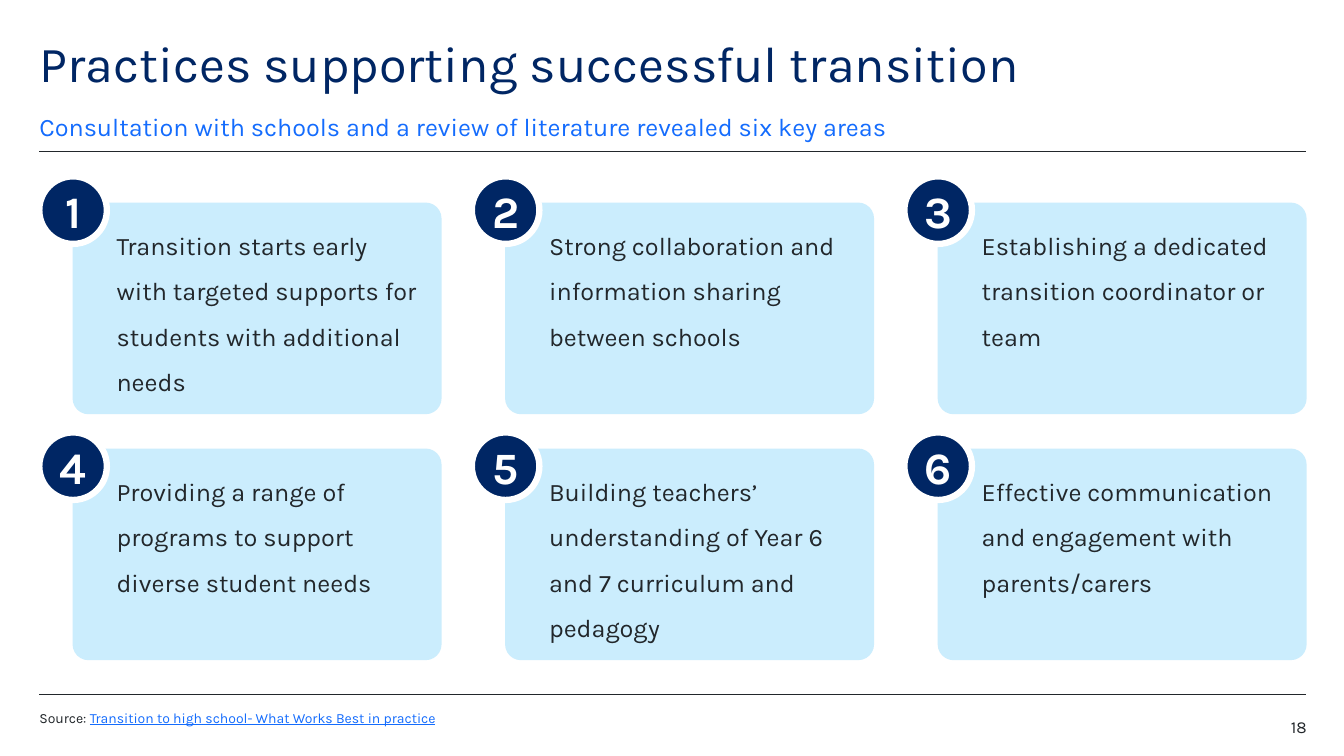
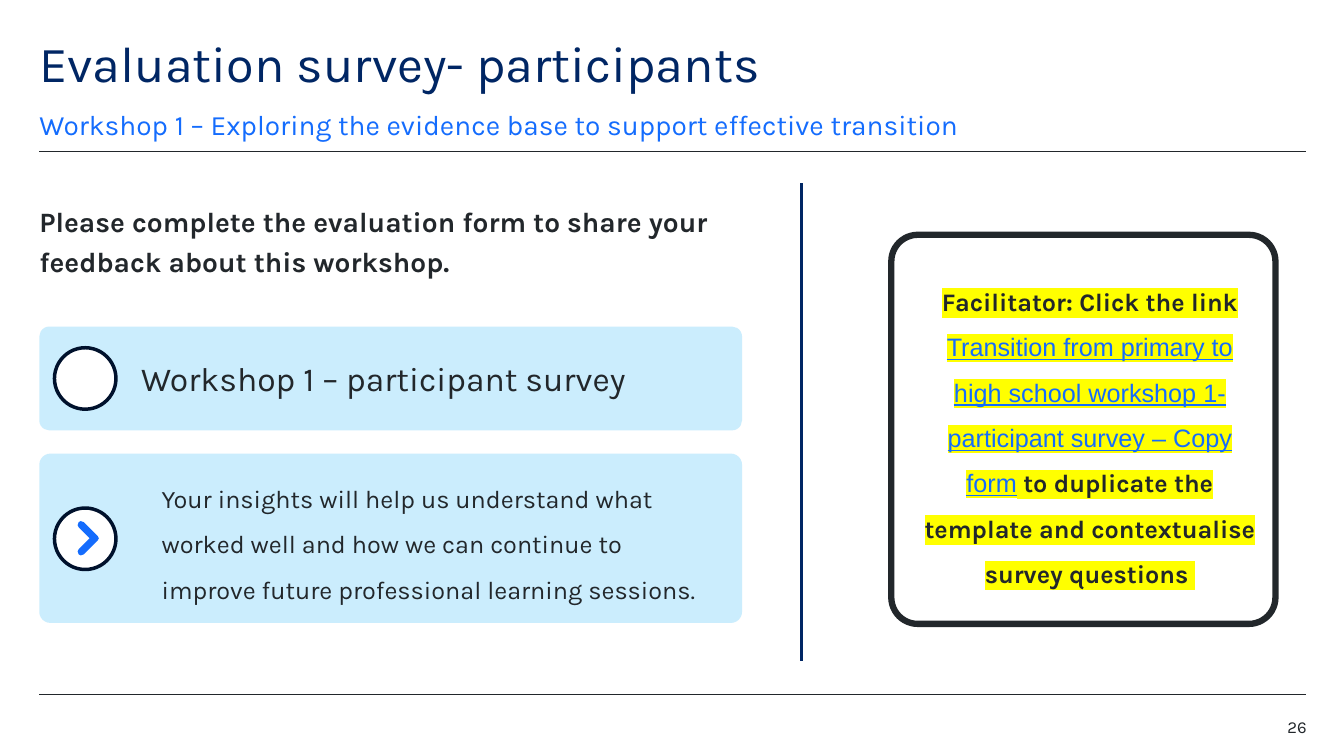
from lxml.etree import SubElement
from pptx import Presentation
from pptx.dml.color import RGBColor
from pptx.enum.shapes import MSO_CONNECTOR, MSO_SHAPE
from pptx.enum.text import MSO_ANCHOR, MSO_AUTO_SIZE, PP_ALIGN
from pptx.oxml import parse_xml
from pptx.oxml.ns import nsdecls, qn
from pptx.util import Inches, Pt

NAVY, BLUE, INK = "002664", "146CFD", "22272B"
PALE, WHITE, DARK, YELLOW = "CBEDFD", "FFFFFF", "00112C", "FFFF00"
LEFT, RIGHT = 0.39, 12.95
PRACTICES = [
    "Transition starts early\nwith targeted supports for students with additional needs",
    "Strong collaboration and information sharing between schools",
    "Establishing a dedicated transition coordinator or team",
    "Providing a range of programs to support diverse student needs",
    "Building teachers’ understanding of Year 6 and 7 curriculum and pedagogy",
    "Effective communication and engagement with parents/carers",
]


def rgb(code):
    """Turn a hex string into a colour."""
    return RGBColor.from_string(code)


def inches(*values):
    """Turn numbers into lengths."""
    return [Inches(v) for v in values]


def set_all(target, values):
    """Set each named attribute on the target."""
    for name, value in values.items():
        setattr(target, name, value)


def add_run(p, text, size, color=INK, font="Karla", highlight=None, **style):
    """Add a formatted run to a paragraph."""
    r = p.add_run()
    r.text = text
    set_all(r.font, {"name": font, "size": Pt(size), **style})
    r.font.color.rgb = rgb(color)
    if highlight:
        mark = parse_xml(f'<a:highlight {nsdecls("a")}><a:srgbClr val="{highlight}"/></a:highlight>')
        r.font._element.find(qn("a:solidFill")).addnext(mark)


def write(sp, runs, size, insets=(0, 0, 0, 0), anchor=MSO_ANCHOR.TOP,
          align=PP_ALIGN.LEFT, spacing=1.0, after=0, fit=MSO_AUTO_SIZE.NONE):
    """Fill a shape with one paragraph of (text, style) runs, breaking lines at newlines."""
    tf = sp.text_frame
    sides = ("margin_left", "margin_top", "margin_right", "margin_bottom")
    set_all(tf, {"word_wrap": True, "auto_size": fit, "vertical_anchor": anchor,
                 **dict(zip(sides, inches(*insets)))})
    p = tf.paragraphs[0]
    set_all(p, {"alignment": align, "line_spacing": spacing, "space_before": Pt(0),
                "space_after": Pt(after)})
    for text, style in runs:
        for i, line in enumerate(text.split("\n")):
            if i:
                p.add_line_break()
            add_run(p, line, size, **style)


def paint(sp, fill=None, line=None, width=0):
    """Set the fill and outline of a shape and drop its shadow."""
    sp.shadow.inherit = False
    if fill:
        sp.fill.solid()
        sp.fill.fore_color.rgb = rgb(fill)
    else:
        sp.fill.background()
    if line:
        sp.line.color.rgb = rgb(line)
        sp.line.width = Pt(width)
    else:
        sp.line.fill.background()


def add_box(shapes, box, radius, fill=None, line=None, width=0):
    """Add a rounded rectangle."""
    sp = shapes.add_shape(MSO_SHAPE.ROUNDED_RECTANGLE, *inches(*box))
    sp.adjustments[0] = radius
    paint(sp, fill, line, width)
    return sp


def add_circle(shapes, x, y, size, fill, line, width):
    """Add an outlined circle."""
    sp = shapes.add_shape(MSO_SHAPE.OVAL, *inches(x, y, size, size))
    paint(sp, fill, line, width)
    return sp


def add_rule(s, start, end, color=INK, width=0.5):
    """Add a straight line."""
    line = s.shapes.add_connector(MSO_CONNECTOR.STRAIGHT, *inches(*start, *end))
    line.line.color.rgb = rgb(color)
    line.line.width = Pt(width)
    SubElement(line._element.spPr, qn("a:effectLst"))


def add_text(s, box, runs, size, **layout):
    """Add a text box."""
    sp = s.shapes.add_textbox(*inches(*box))
    write(sp, runs, size, **layout)


def fill_placeholder(sp, box, text, size, color, **layout):
    """Move a placeholder and write its unbulleted text."""
    set_all(sp, dict(zip(("left", "top", "width", "height"), inches(*box))))
    pPr = sp.text_frame.paragraphs[0]._p.get_or_add_pPr()
    pPr.set("marL", "0")
    pPr.set("indent", "0")
    SubElement(pPr, qn("a:buNone"))
    write(sp, [(text, {"color": color})], size, **layout)


def add_slide(prs, title, subtitle, number, subtitle_size, subtitle_spacing):
    """Add a slide with its title, subtitle, rules and page number."""
    s = prs.slides.add_slide(prs.slide_layouts[1])
    for y in (1.5, 6.89):
        add_rule(s, (LEFT, y), (RIGHT, y))
    fill_placeholder(s.shapes.title, (LEFT, 0.39, 11.02, 0.6), title, 36, NAVY, spacing=0.9)
    fill_placeholder(s.placeholders[1], (LEFT, 1.06, 11.02, 0.34), subtitle, subtitle_size, BLUE,
                     anchor=MSO_ANCHOR.BOTTOM, spacing=subtitle_spacing, after=12)
    add_text(s, (12.17, 7.13, 0.79, 0.2), [(number, {})], 12,
             align=PP_ALIGN.RIGHT, spacing=0.9, after=6)
    return s


def add_practice(s, number, text, x, card_y, badge_y):
    """Add a card with a numbered badge on its corner."""
    shapes = s.shapes.add_group_shape().shapes
    card = add_box(shapes, (x + 0.33, card_y, 3.66, 2.1), 0.075, PALE)
    write(card, [(text, {})], 18, insets=(0.39, 0.08, 0.2, 0.12), spacing=1.5)
    badge = add_circle(shapes, x, badge_y, 0.67, NAVY, WHITE, 4.5)
    write(badge, [(str(number), {"color": WHITE, "bold": True})], 32,
          insets=(0.1, 0.05, 0.1, 0.05), anchor=MSO_ANCHOR.MIDDLE, align=PP_ALIGN.CENTER)


def add_chevron(shapes):
    """Add a rounded chevron mirrored about its tip."""
    tip = 534
    upper = [(89, tip), (78, 523), (77, 521), (78, 518), (80, 517), (83, 518), (97, 532), (98, tip)]
    lower = [(x, 2 * tip - y) for x, y in reversed(upper[1:-1])]
    outline = shapes.build_freeform(*upper[0], scale=Inches(0.01))
    outline.add_line_segments(upper[1:] + lower, close=True)
    paint(outline.convert_to_shape(), BLUE)


def add_panel(s, y, height, radius, icon_y, text, size, **layout):
    """Add a wide panel with a circle at its left and return the circle's group."""
    panel = add_box(s.shapes, (LEFT, y, 6.97, height), radius, PALE)
    write(panel, [(text, {})], size, anchor=MSO_ANCHOR.MIDDLE, **layout)
    icon = s.shapes.add_group_shape().shapes
    add_circle(icon, 0.54, icon_y, 0.61, WHITE, DARK, 2.5)
    return icon


def build_practices(prs):
    """Build the slide with six practice cards."""
    s = add_slide(prs, "Practices supporting successful transition",
                  "Consultation with schools and a review of literature revealed six key areas",
                  "18", 18, 1.4)
    rows = [(2.01, 1.75), (4.45, 4.29)]
    for i, text in enumerate(PRACTICES):
        row, col = divmod(i, 3)
        add_practice(s, i + 1, text, LEFT + 4.29 * col, *rows[row])
    add_text(s, (LEFT, 6.97, 11.51, 0.25),
             [("Source: ", {}),
              ("Transition to high school- What Works Best in practice",
               {"color": BLUE, "underline": True})], 10, spacing=1.4)


def build_survey(prs):
    """Build the slide that asks for survey answers."""
    s = add_slide(prs, "Evaluation survey- participants",
                  "Workshop 1 – Exploring the evidence base to support effective transition",
                  "26", 20, 1.5)
    add_text(s, (LEFT, 1.96, 7.05, 0.98),
             [("Please complete the evaluation form to share your feedback about this workshop.",
               {"bold": True})], 20, spacing=1.2, after=12)
    add_panel(s, 3.24, 1.03, 0.097, 3.45, "Workshop 1 – participant survey", 24,
              insets=(0.98, 0.51, 0.2, 0.51))
    icon = add_panel(s, 4.5, 1.68, 0.066, 5.04,
                     "Your insights will help us understand what worked well and how we can "
                     "continue to improve future professional learning sessions.", 18,
                     insets=(1.18, 0.55, 0.24, 0.59), spacing=1.5, after=12)
    add_chevron(icon)
    add_rule(s, (7.95, 1.82), (7.95, 6.56), NAVY, 2.5)
    add_box(s.shapes, (8.84, 2.33, 3.81, 3.86), 0.069, line=INK, width=4.5)
    strong = {"bold": True, "highlight": YELLOW}
    link = {"font": "Arial", "color": BLUE, "underline": True, "highlight": YELLOW}
    add_text(s, (9.06, 2.65, 3.5, 3.23),
             [("Facilitator: Click the link ", strong),
              ("Transition from primary to high school workshop 1- participant survey – Copy form",
               link),
              (" to duplicate the template and contextualise survey questions ", strong)], 18,
             insets=(0.1, 0.05, 0.1, 0.05), anchor=MSO_ANCHOR.MIDDLE, align=PP_ALIGN.CENTER,
             spacing=1.5, fit=MSO_AUTO_SIZE.SHAPE_TO_FIT_TEXT)


def main():
    """Build and save the presentation."""
    prs = Presentation()
    prs.slide_width, prs.slide_height = inches(13.33, 7.5)
    build_practices(prs)
    build_survey(prs)
    prs.save("out.pptx")


if __name__ == "__main__":
    main()
